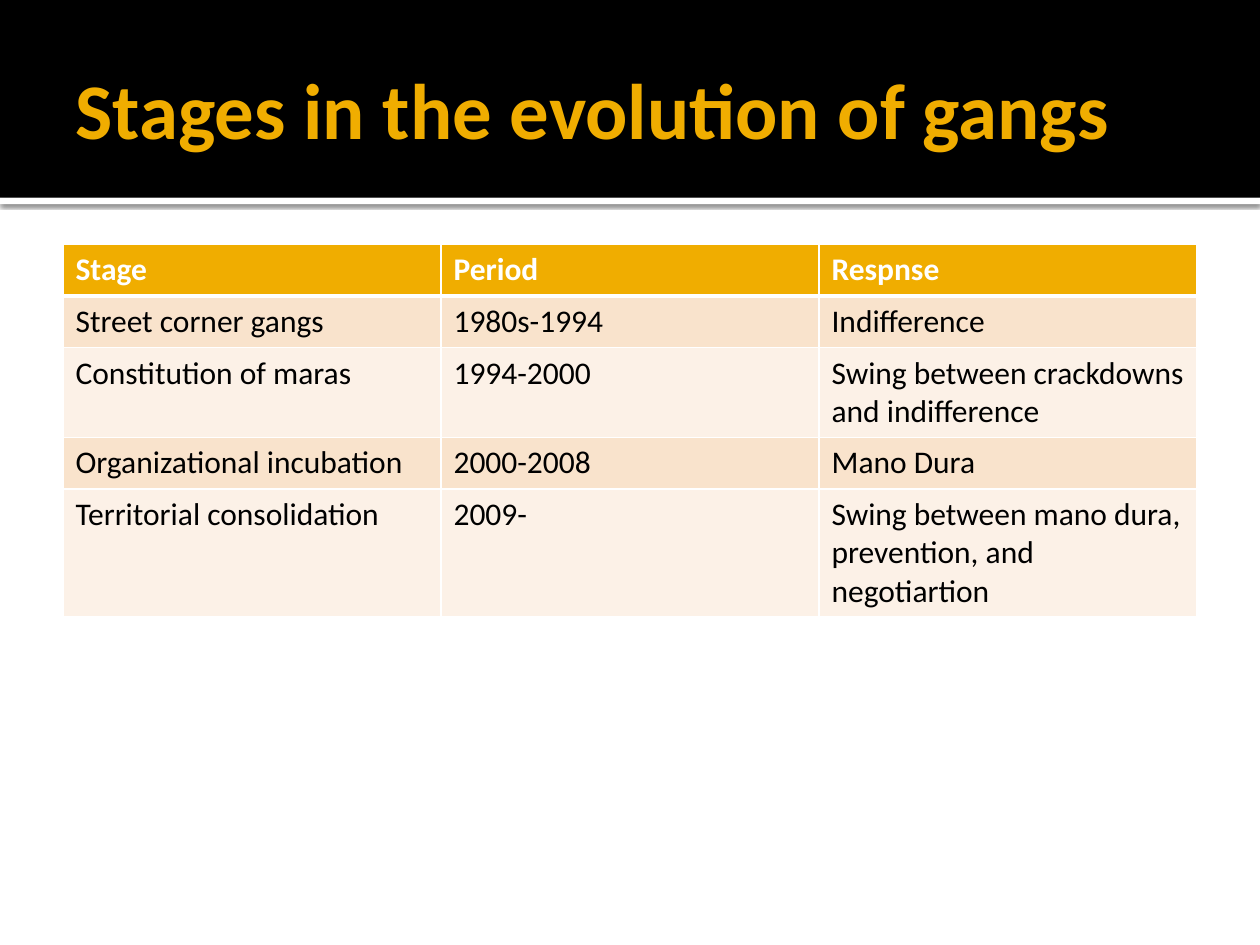
from lxml.etree import SubElement
from pptx import Presentation
from pptx.dml.color import RGBColor
from pptx.enum.shapes import MSO_SHAPE
from pptx.enum.text import MSO_ANCHOR, MSO_AUTO_SIZE, PP_ALIGN
from pptx.oxml import parse_xml
from pptx.oxml.ns import nsdecls, qn
from pptx.util import Inches, Pt

# Content
TITLE = "Stages in the evolution of gangs"
ROWS = [
    ("Stage", "Period", "Respnse"),
    ("Street corner gangs", "1980s-1994", "Indifference"),
    ("Constitution of maras", "1994-2000", "Swing between crackdowns and indifference"),
    ("Organizational incubation", "2000-2008", "Mano Dura"),
    ("Territorial consolidation", "2009-",
     "Swing between mano dura, prevention, and negotiartion"),
]
FONT = "Calibri"
GOLD, WHITE, BLACK = "F0AD00", "FFFFFF", "000000"
BANDS = ("F9E3CC", "FCF1E7")
ROW_H = 0.41


def rgb(value):
    return RGBColor.from_string(value)


def add_run(p, text, size, color, bold=False):
    r = p.add_run()
    r.text = text
    r.font.name, r.font.size, r.font.bold = FONT, Pt(size), bold
    r.font.color.rgb = rgb(color)


def add_band(s, top, height, color):
    sp = s.shapes.add_shape(MSO_SHAPE.RECTANGLE, 0, Inches(top), Inches(10), Inches(height))
    sp.shadow.inherit = False
    sp.fill.solid()
    sp.fill.fore_color.rgb = rgb(color)
    sp.line.fill.background()
    return sp


def add_shadow(sp):
    effects = sp._element.spPr.find(qn("a:effectLst"))
    effects.append(parse_xml(
        f'<a:outerShdw {nsdecls("a")} blurRad="{Pt(2.5)}" dist="{Pt(0.8)}" dir="5400000" '
        f'algn="tl" rotWithShape="0"><a:srgbClr val="{BLACK}"><a:alpha val="60000"/>'
        '</a:srgbClr></a:outerShdw>'))


def set_borders(cell, widths):
    tcPr = cell._tc.get_or_add_tcPr()
    for i, (side, width) in enumerate(widths.items()):
        ln = parse_xml(f'<a:{side} {nsdecls("a")} w="{Pt(width)}"/>')
        SubElement(SubElement(ln, qn("a:solidFill")), qn("a:srgbClr"), val=WHITE)
        tcPr.insert(i, ln)  # borders come before the fill


prs = Presentation()
prs.slide_width, prs.slide_height = Inches(10), Inches(7.5)
s = prs.slides.add_slide(prs.slide_layouts[5])

# Header band and the white rule under it
add_shadow(add_band(s, 1.57, 0.05, WHITE))
add_band(s, 0, 1.57, BLACK)

# Title, brought in front of the band
title = s.shapes.title
s.shapes._spTree.append(title._element)
title.left, title.top = Inches(0.5), Inches(0.17)
title.width, title.height = Inches(9), Inches(1.37)
tf = title.text_frame
tf.word_wrap, tf.auto_size = True, MSO_AUTO_SIZE.NONE
tf.vertical_anchor = MSO_ANCHOR.MIDDLE
tf.margin_left = Inches(0.1)
tf.margin_right = tf.margin_top = tf.margin_bottom = Inches(0.05)
tf.paragraphs[0].alignment = PP_ALIGN.LEFT
add_run(tf.paragraphs[0], TITLE, 45, GOLD, True)

# Table of stages
table = s.shapes.add_table(len(ROWS), len(ROWS[0]), Inches(0.5), Inches(1.94),
                           Inches(9), Inches(ROW_H * len(ROWS))).table
for i, row in enumerate(ROWS):
    table.rows[i].height = Inches(ROW_H)
    header = i == 0
    for j, text in enumerate(row):
        cell = table.cell(i, j)
        cell.fill.solid()
        cell.fill.fore_color.rgb = rgb(GOLD if header else BANDS[(i - 1) % 2])
        set_borders(cell, {"lnL": 1, "lnR": 1, "lnT": 3 if i == 1 else 1,
                           "lnB": 3 if header else 1})
        add_run(cell.text_frame.paragraphs[0], text, 18, WHITE if header else BLACK, header)

prs.save("out.pptx")
